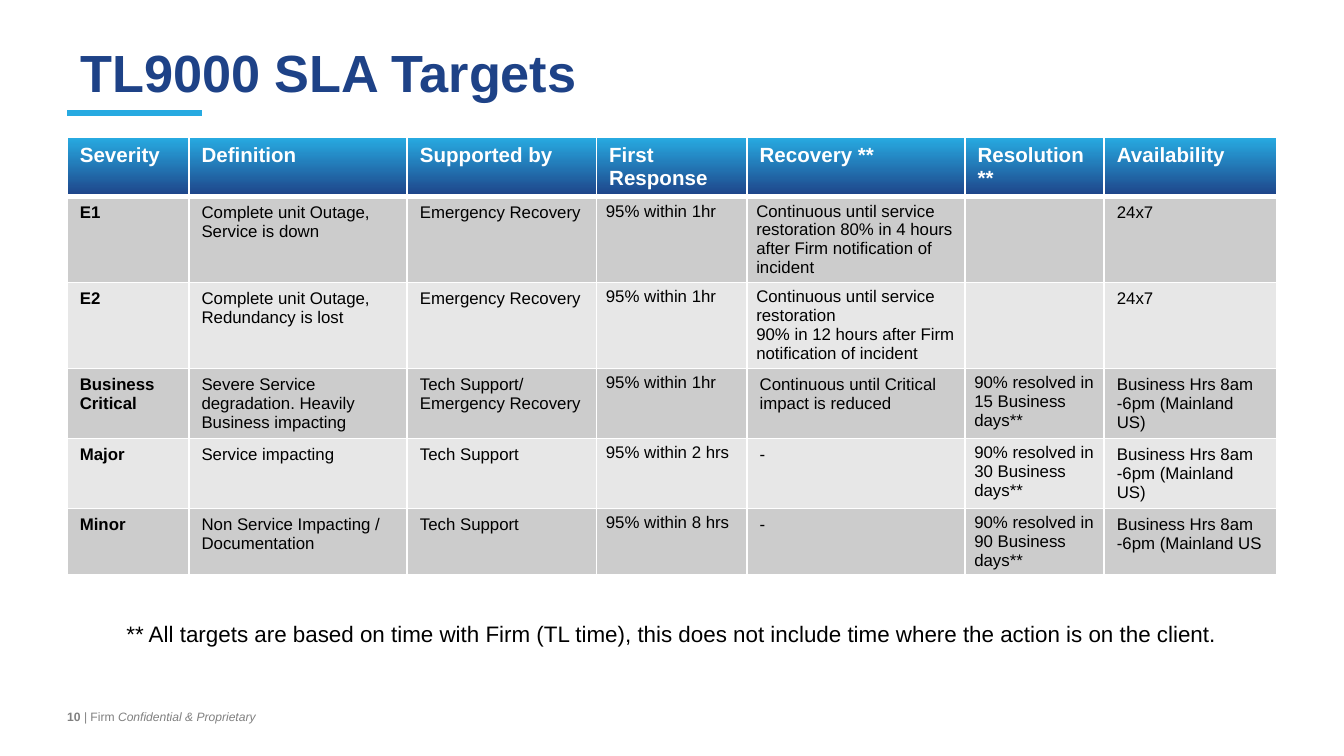
from typing import NamedTuple

from lxml import etree
from pptx import Presentation
from pptx import util as u
from pptx.dml import color
from pptx.enum import shapes, text
from pptx.oxml import ns

FONT = "Arial"
BLACK, WHITE = "000000", "FFFFFF"
SKY, NAVY, GRAY = "27AAE1", "1E4287", "808080"
BANDS = ("CCCCCC", "E7E7E7")
WIDE, TIGHT = (6.8, 3.6), (5, 2.7)
LEFT, WIDTH = 36, 648


class Run(NamedTuple):
    words: str
    bold: bool = False
    slant: bool = False


class Label(NamedTuple):
    top: float
    width: float
    height: float
    size: float
    hue: str
    runs: tuple
    align: text.PP_ALIGN = text.PP_ALIGN.LEFT
    anchor: text.MSO_ANCHOR = text.MSO_ANCHOR.MIDDLE
    inset: float = 7.2


class Row(NamedTuple):
    height: float
    cells: tuple
    tight: tuple = ()


COLS = (65.2, 117, 101.4, 80.6, 116.8, 74.6, 92.4)
HOURS = "Business Hrs 8am -6pm (Mainland US)"
ROWS = (
    Row(31, ("Severity", "Definition", "Supported by", "First Response",
             "Recovery **", "Resolution **", "Availability")),
    Row(46, ("E1", "Complete unit Outage, Service is down", "Emergency Recovery",
             "95% within 1hr",
             "Continuous until service restoration 80% in 4 hours after Firm "
             "notification of incident", "", "24x7"), (3, 4)),
    Row(46, ("E2", "Complete unit Outage, Redundancy is lost", "Emergency Recovery",
             "95% within 1hr",
             "Continuous until service restoration\n"
             "90% in 12 hours after Firm notification of incident", "", "24x7"), (3, 4)),
    Row(37.5, ("Business Critical",
               "Severe Service degradation. Heavily Business impacting",
               "Tech Support/ Emergency Recovery", "95% within 1hr",
               "Continuous until Critical impact is reduced",
               "90% resolved in 15 Business days**", HOURS), (3, 5)),
    Row(37.5, ("Major", "Service impacting", "Tech Support", "95% within 2 hrs", "-",
               "90% resolved in 30 Business days**", HOURS), (3, 5)),
    Row(35.5, ("Minor", "Non Service Impacting / Documentation", "Tech Support",
               "95% within 8 hrs", "-",
               "90% resolved in 90 Business days**", HOURS[:-1]), (3, 5)),
)
LABELS = (
    Label(16.5, WIDTH, 44, 28, NAVY, (Run("TL9000 SLA Targets", True),)),
    Label(328.5, WIDTH, 21.6, 12, BLACK,
          (Run("** All targets are based on time with Firm (TL time), this does not "
               "include time where the action is on the client."),),
          text.PP_ALIGN.CENTER, text.MSO_ANCHOR.TOP),
    Label(373, 168, 21.6, 6.5, GRAY,
          (Run("10 ", True), Run("| Firm "),
           Run("Confidential & Proprietary", slant=True)), inset=0),
)


def tint(code: str) -> color.RGBColor:
    return color.RGBColor.from_string(code)


def style(run, size: float, hue: str, bold: bool, slant: bool = False) -> None:
    font = run.font
    font.name, font.size = FONT, u.Pt(size)
    font.bold, font.italic = bold, slant
    font.color.rgb = tint(hue)


def add_label(slide, label: Label) -> None:
    box = slide.shapes.add_textbox(u.Pt(LEFT), u.Pt(label.top),
                                   u.Pt(label.width), u.Pt(label.height))
    frame = box.text_frame
    frame.word_wrap = True
    frame.vertical_anchor = label.anchor
    frame.margin_left = u.Pt(label.inset)
    para = frame.paragraphs[0]
    para.alignment = label.align
    for part in label.runs:
        run = para.add_run()
        run.text = part.words
        style(run, label.size, label.hue, part.bold, part.slant)


def add_rule(slide) -> None:
    rule = slide.shapes.add_connector(shapes.MSO_CONNECTOR.STRAIGHT, u.Pt(LEFT),
                                      u.Pt(60.7), u.Pt(LEFT + 72), u.Pt(60.7))
    rule.line.color.rgb = tint(SKY)
    rule.line.width = u.Pt(3)
    etree.SubElement(rule._element.spPr, ns.qn("a:effectLst"))


def add_edge(cell, side: str, width: float) -> None:
    props = cell._tc.get_or_add_tcPr()
    edge = etree.SubElement(props, ns.qn(f"a:ln{side}"), w=str(u.Pt(width)))
    fill = etree.SubElement(edge, ns.qn("a:solidFill"))
    etree.SubElement(fill, ns.qn("a:srgbClr"), val=WHITE)


def fill_cell(cell, band: int) -> None:
    if band:
        cell.fill.solid()
        cell.fill.fore_color.rgb = tint(BANDS[(band - 1) % 2])
        return
    cell.fill.gradient()
    cell.fill.gradient_angle = 270
    for stop, hue in zip(cell.fill.gradient_stops, (SKY, NAVY)):
        stop.color.rgb = tint(hue)


def draw_cell(cell, words: str, band: int, col: int, tight: bool) -> None:
    side, end = TIGHT if tight else WIDE
    cell.margin_left = cell.margin_right = u.Pt(side)
    cell.margin_top = cell.margin_bottom = u.Pt(end)
    for edge in "LRTB":
        thick = (band, edge) in ((0, "B"), (1, "T"))
        add_edge(cell, edge, 3 if thick else 1)
    fill_cell(cell, band)
    cell.text_frame.text = words
    size, hue = (9, BLACK) if band else (11, WHITE)
    for para in cell.text_frame.paragraphs:
        for run in para.runs:
            style(run, size, hue, band == 0 or col == 0)


def add_grid(slide) -> None:
    height = sum(row.height for row in ROWS)
    grid = slide.shapes.add_table(len(ROWS), len(COLS), u.Pt(LEFT), u.Pt(73.7),
                                  u.Pt(WIDTH), u.Pt(height)).table
    for col, width in zip(grid.columns, COLS):
        col.width = u.Pt(width)
    for band, row in enumerate(ROWS):
        grid.rows[band].height = u.Pt(row.height)
        for col, words in enumerate(row.cells):
            draw_cell(grid.cell(band, col), words, band, col, col in row.tight)


def main() -> None:
    deck = Presentation()
    deck.slide_width, deck.slide_height = u.Pt(720), u.Pt(405)
    slide = deck.slides.add_slide(deck.slide_layouts[6])
    add_rule(slide)
    add_grid(slide)
    for label in LABELS:
        add_label(slide, label)
    deck.save("out.pptx")


if __name__ == "__main__":
    main()
